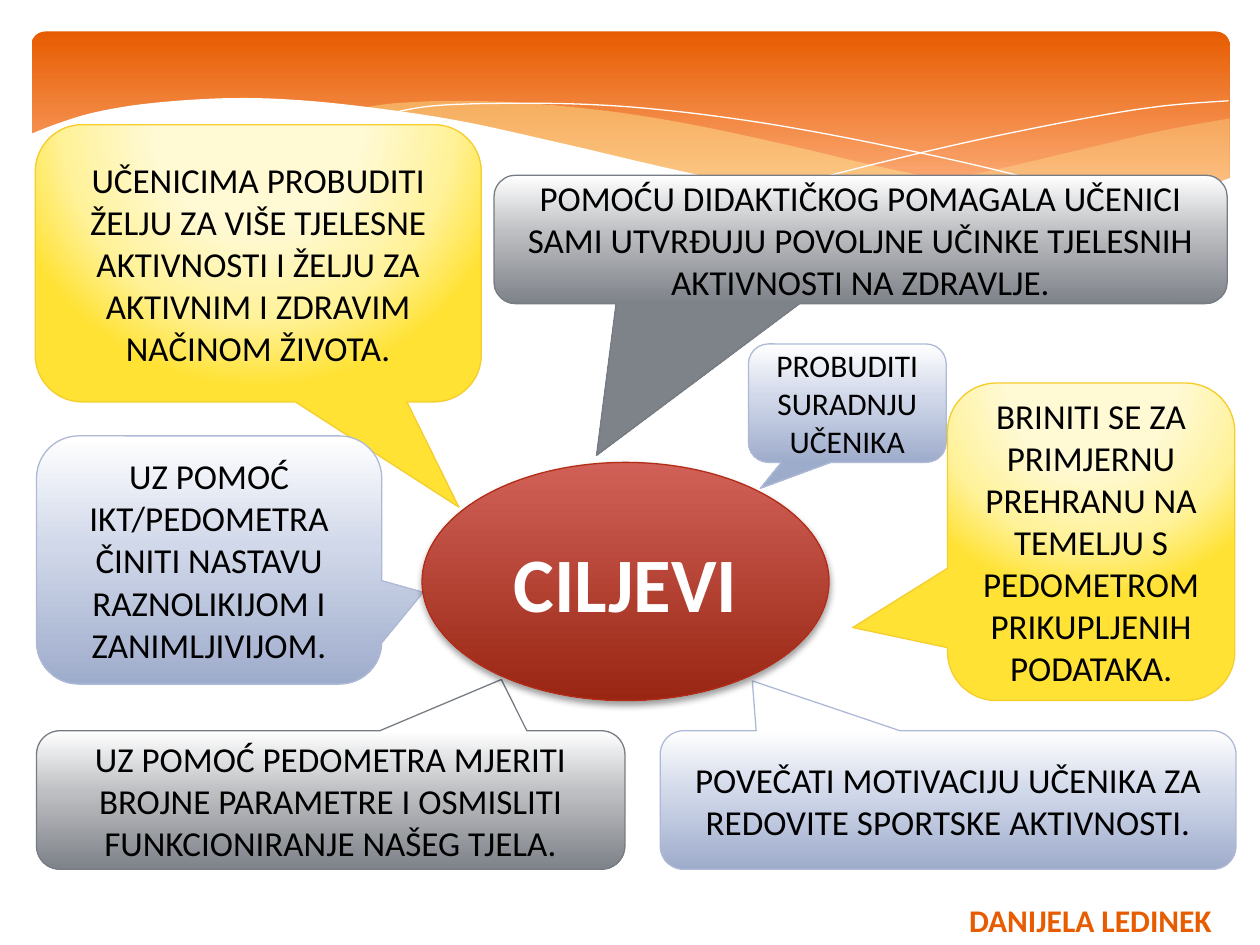
from lxml import etree
from pptx import Presentation
from pptx.dml.color import RGBColor
from pptx.enum.shapes import MSO_SHAPE
from pptx.enum.text import MSO_ANCHOR, MSO_AUTO_SIZE, PP_ALIGN
from pptx.oxml.ns import qn
from pptx.util import Inches, Pt

CALLOUT = MSO_SHAPE.ROUNDED_RECTANGULAR_CALLOUT
ROUNDED = MSO_SHAPE.ROUNDED_RECTANGLE
ELLIPSE = MSO_SHAPE.OVAL
CENTER = PP_ALIGN.CENTER
MIDDLE = MSO_ANCHOR.MIDDLE
GROW = MSO_AUTO_SIZE.SHAPE_TO_FIT_TEXT

COLUMNS, ROWS = 100, 75
WIDTH, HEIGHT = Inches(10), Inches(7.5)

BLACK = RGBColor(0x00, 0x00, 0x00)
WHITE = RGBColor(0xFF, 0xFF, 0xFF)
ORANGE = RGBColor(0xE7, 0x5C, 0x01)
PEACH = RGBColor(0xFE, 0xB6, 0x87)
CREAM = RGBColor(0xFF, 0xF3, 0x9D)
RED_EDGE = RGBColor(0xB3, 0x2C, 0x16)
RED_LIGHT = RGBColor(0xD1, 0x61, 0x58)
RED_DARK = RGBColor(0x99, 0x26, 0x13)
YELLOW_EDGE = RGBColor(0xF5, 0xCD, 0x2D)
YELLOW_PALE = RGBColor(0xFF, 0xF9, 0xD4)
YELLOW_MID = RGBColor(0xFF, 0xF2, 0x9A)
YELLOW_DEEP = RGBColor(0xFF, 0xE2, 0x34)
BLUE_EDGE = RGBColor(0xAE, 0xBA, 0xD5)
BLUE_MID = RGBColor(0xD1, 0xD8, 0xE9)
BLUE_DEEP = RGBColor(0x9E, 0xAC, 0xCC)
GREY_EDGE = RGBColor(0x77, 0x7C, 0x84)
GREY_MID = RGBColor(0xBD, 0xBF, 0xC2)
GREY_DEEP = RGBColor(0x7E, 0x82, 0x89)

HEADER = {"stops": [(0, ORANGE), (90, PEACH)], "edge": None}
RED = {"stops": [(0, RED_LIGHT), (100, RED_DARK)], "edge": RED_EDGE}
BLUE = {"stops": [(0, WHITE), (44, BLUE_MID), (100, BLUE_DEEP)], "edge": BLUE_EDGE}
GREY = {"stops": [(0, WHITE), (44, GREY_MID), (100, GREY_DEEP)], "edge": GREY_EDGE}
YELLOW = {"stops": [(40, YELLOW_PALE), (74, YELLOW_MID), (100, YELLOW_DEEP)],
          "edge": YELLOW_EDGE, "focus": {"l": 20, "t": -40, "r": 20, "b": 140}}

# Each wave is a list of smooth stretches; stretches meet at corners.
WAVES = [
    ([[(97.6, 9.4), (92.1, 10.4), (86.1, 11.8), (77.9, 13.7), (66.1, 16)],
      [(66.1, 16), (71.9, 16.7), (76.9, 17.1), (81.4, 17.2), (86.3, 17),
       (90.5, 16.3), (94.2, 15.4), (97.6, 14.1)]], CREAM, 29),
    ([[(89.3, 16.7), (80.7, 15.4), (70.6, 13.4), (62.9, 11.6), (55.5, 10),
       (48.9, 8.9), (42, 8.2), (36.1, 8), (31.3, 8.2), (28.6, 8.6)],
      [(28.6, 8.6), (36.2, 9.7), (44.9, 11.6), (56.6, 14.3), (65, 15.8),
       (72.2, 16.8), (79.6, 17.3), (84.8, 17.2), (89.3, 16.7)]], CREAM, 40),
    ([[(30.9, 9), (34.4, 8.4), (40.1, 8.2), (46.9, 8.3), (53.3, 8.8),
       (60.8, 9.8), (69.5, 11.4), (79.5, 13.6), (90.7, 16.6)]], None, None),
    ([[(61.3, 15.1), (69.5, 13), (77.6, 11.1), (86.6, 9.3), (92.4, 8.4),
       (97.5, 8)]], None, None),
    ([[(97.7, 14.1), (93, 15.7), (87.5, 16.7), (80.9, 17.1), (72.6, 16.7),
       (64.8, 15.6), (55.5, 13.9), (44.7, 11.4), (36.5, 9.6), (29.2, 8.5),
       (23, 7.9), (17.7, 7.8), (11.9, 8.2), (7.6, 8.9), (4.6, 9.8), (2.3, 10.7)],
      [(2.3, 22.4), (97.7, 22.4)]], WHITE, 100),
]

CALLOUTS = [
    ((2.8, 9.9, 35.4, 22), (0.45, 0.88), YELLOW, 20,
     "UČENICIMA PROBUDITI ŽELJU ZA VIŠE TJELESNE AKTIVNOSTI I ŽELJU ZA "
     "AKTIVNIM I ZDRAVIM NAČINOM ŽIVOTA."),
    ((52.4, 58, 45.7, 11), (-0.34, -0.86), BLUE, 20,
     "POVEČATI MOTIVACIJU UČENIKA ZA REDOVITE SPORTSKE AKTIVNOSTI."),
    ((2.9, 34.6, 27.4, 19.7), (0.62, 0.13), BLUE, 20,
     "UZ POMOĆ IKT/PEDOMETRA ČINITI NASTAVU RAZNOLIKIJOM I ZANIMLJIVIJOM."),
    ((2.9, 58, 46.7, 11), (0.29, -0.87), GREY, 20,
     "UZ POMOĆ PEDOMETRA MJERITI BROJNE PARAMETRE I OSMISLITI "
     "FUNKCIONIRANJE NAŠEG TJELA."),
    ((75.2, 30.4, 22.8, 25.2), (-0.83, 0.27), YELLOW, 20,
     "BRINITI SE ZA PRIMJERNU PREHRANU NA TEMELJU S PEDOMETROM "
     "PRIKUPLJENIH PODATAKA."),
    ((39.2, 13.9, 58.2, 10.2), (-0.36, 1.68), GREY, 20,
     "POMOĆU DIDAKTIČKOG POMAGALA UČENICI SAMI UTVRĐUJU POVOLJNE UČINKE "
     "TJELESNIH AKTIVNOSTI NA ZDRAVLJE."),
    ((59.4, 27.3, 15.7, 9.4), (-0.44, 0.72), BLUE, 18,
     "PROBUDITI SURADNJU UČENIKA"),
]


def smooth(points, steps=6):
    """Return points along a Catmull-Rom curve through the given points."""
    if len(points) < 3:
        return points
    padded = [points[0], *points, points[-1]]
    curve = [points[0]]
    for a, b, c, d in zip(padded, padded[1:], padded[2:], padded[3:]):
        for step in range(1, steps + 1):
            t = step / steps
            curve.append(tuple(
                (2 * q + (r - p) * t + (2 * p - 5 * q + 4 * r - s) * t ** 2
                 + (3 * q - p - 3 * r + s) * t ** 3) / 2
                for p, q, r, s in zip(a, b, c, d)))
    return curve


def add_node(parent, tag, **attributes):
    return etree.SubElement(parent, qn(tag), {k: str(v) for k, v in attributes.items()})


def add_color(parent, color, alpha):
    node = add_node(parent, "a:srgbClr", val=color)
    add_node(node, "a:alpha", val=alpha * 1000)


class SlidePainter:
    font = "Calibri"

    def __init__(self, page):
        self.page = page

    def place(self, column, row):
        return round(column * WIDTH / COLUMNS), round(row * HEIGHT / ROWS)

    def frame(self, area):
        return *self.place(*area[:2]), *self.place(*area[2:])

    def gradient(self, shape, look):
        shape.fill.gradient()
        fill = shape._element.spPr.find(qn("a:gradFill"))
        for child in list(fill):
            fill.remove(child)
        stops = add_node(fill, "a:gsLst")
        for position, color in look["stops"]:
            add_color(add_node(stops, "a:gs", pos=position * 1000), color, 100)
        if "focus" in look:
            circle = add_node(fill, "a:path", path="circle")
            add_node(circle, "a:fillToRect",
                     **{side: share * 1000 for side, share in look["focus"].items()})
        else:
            add_node(fill, "a:lin", ang=90 * 60000, scaled=0)

    def label(self, shape, text, color, frame_format, font_format):
        for name, value in frame_format.items():
            setattr(shape.text_frame, name, value)
        para = shape.text_frame.paragraphs[0]
        para.alignment = CENTER
        span = para.add_run()
        span.text = text
        for name, value in {"name": self.font, **font_format}.items():
            setattr(span.font, name, value)
        span.font.color.rgb = color

    def shape(self, kind, area, look, adjustments=()):
        shape = self.page.shapes.add_shape(kind, *self.frame(area))
        shape.shadow.inherit = False
        for index, value in enumerate(adjustments):
            shape.adjustments[index] = value
        self.gradient(shape, look)
        if look["edge"] is None:
            shape.line.fill.background()
        else:
            shape.line.color.rgb = look["edge"]
            shape.line.width = Pt(0.75)
        return shape

    def callout(self, area, tip, look, size, text):
        box = self.shape(CALLOUT, area, look, (*tip, 0.17))
        self.label(box, text, BLACK, {"word_wrap": True, "vertical_anchor": MIDDLE},
                   {"size": Pt(size)})

    def hub(self, area, text):
        oval = self.shape(ELLIPSE, area, RED)
        effects = oval._element.spPr.find(qn("a:effectLst"))
        shadow = add_node(effects, "a:outerShdw", blurRad=Pt(4), dist=Pt(2),
                          dir=90 * 60000, rotWithShape=0)
        add_color(shadow, BLACK, 38)
        self.label(oval, text, WHITE, {"word_wrap": True, "vertical_anchor": MIDDLE},
                   {"size": Pt(44), "bold": True})

    def signature(self, area, text):
        box = self.page.shapes.add_textbox(*self.frame(area))
        self.label(box, text, ORANGE, {"word_wrap": False, "auto_size": GROW},
                   {"size": Pt(18), "bold": True})

    def wave(self, stretches, color, alpha):
        """Draw a filled wave, or a white hairline when there is no colour."""
        points = [self.place(*point) for part in stretches for point in smooth(part)]
        builder = self.page.shapes.build_freeform(*points[0])
        builder.add_line_segments(points[1:], close=color is not None)
        wave = builder.convert_to_shape()
        wave.shadow.inherit = False
        if color is None:
            wave.fill.background()
            wave.line.color.rgb = WHITE
            wave.line.width = Pt(0)
        else:
            wave.fill.solid()
            wave.fill.fore_color.rgb = color
            node = wave._element.spPr.find(qn("a:solidFill"))[0]
            add_node(node, "a:alpha", val=alpha * 1000)
            wave.line.fill.background()


def main():
    deck = Presentation()
    deck.slide_width, deck.slide_height = WIDTH, HEIGHT
    painter = SlidePainter(deck.slides.add_slide(deck.slide_layouts[6]))
    painter.shape(ROUNDED, (2.5, 2.5, 95.1, 15.6), HEADER, (0.07,))
    for wave in WAVES:
        painter.wave(*wave)
    for callout in CALLOUTS:
        painter.callout(*callout)
    painter.hub((33.5, 36.7, 32.3, 18.9), "CILJEVI")
    painter.signature((75.2, 71, 22.7, 4), "DANIJELA LEDINEK")
    deck.save("out.pptx")


if __name__ == "__main__":
    main()
